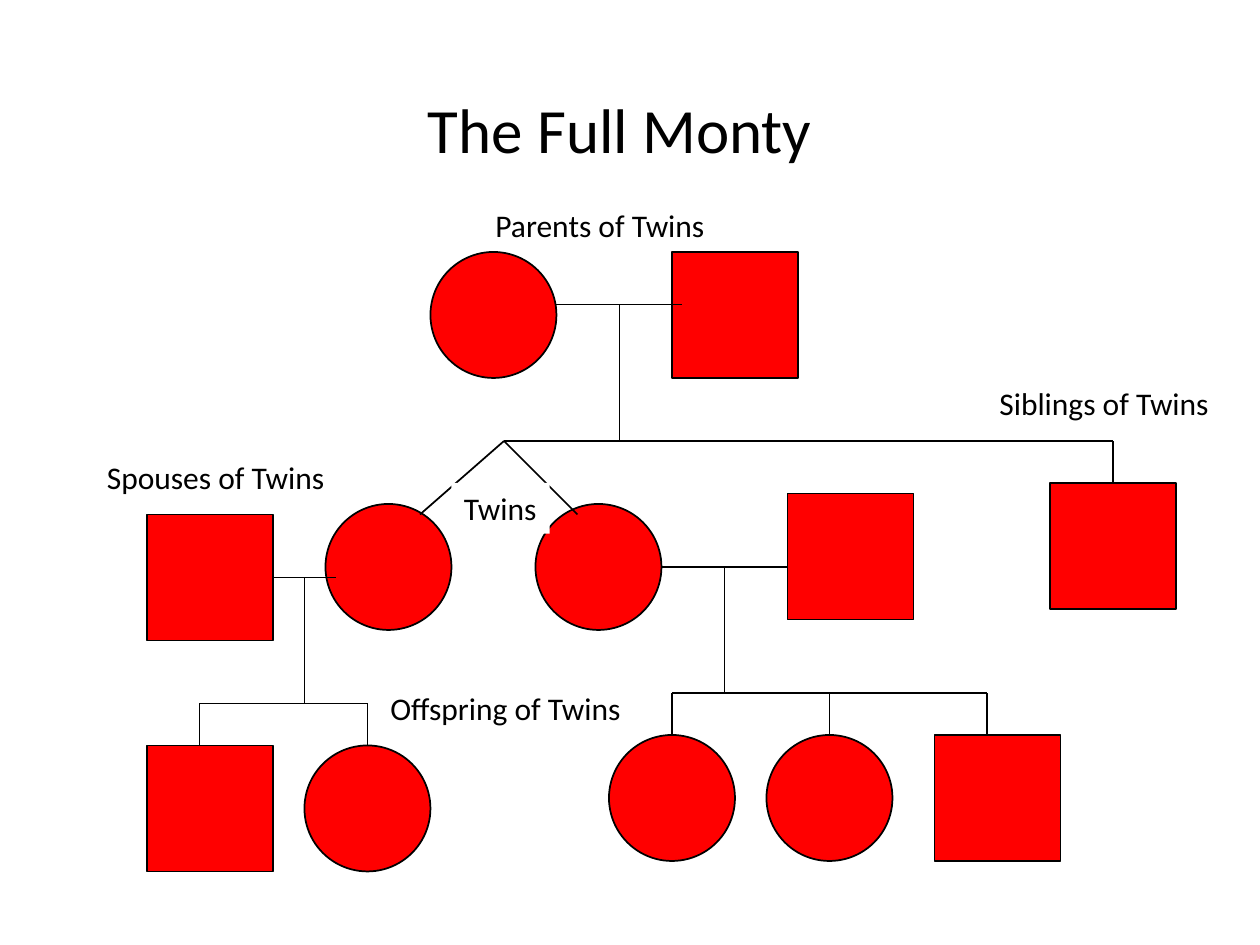
"""Build a pedigree chart of twins with their parents, siblings, spouses and offspring."""
from dataclasses import dataclass

from lxml import etree
from pptx import Presentation
from pptx import util as u
from pptx.dml.color import RGBColor
from pptx.enum import shapes, text
from pptx.oxml.ns import qn

RED = RGBColor(0xFF, 0x00, 0x00)
BLACK = RGBColor(0x00, 0x00, 0x00)
WHITE = RGBColor(0xFF, 0xFF, 0xFF)
FONT = "Calibri"
GRID_PER_INCH = 12
SIZE = 12
DROP = 4
WOMAN = shapes.MSO_SHAPE.OVAL
MAN = shapes.MSO_SHAPE.RECTANGLE


@dataclass(frozen=True)
class Person:
    kind: shapes.MSO_SHAPE
    x: int
    y: int


@dataclass(frozen=True)
class Family:
    left: int
    right: int
    y: int
    bar_y: int
    bar: tuple[int, int]
    drops: tuple[int, ...]


@dataclass(frozen=True)
class Label:
    text: str
    x: int
    y: int
    width: float


PEOPLE = [
    Person(WOMAN, 41, 24), Person(MAN, 64, 24),
    Person(MAN, 14, 49), Person(WOMAN, 31, 48),
    Person(WOMAN, 51, 48), Person(MAN, 75, 47),
    Person(MAN, 100, 46),
    Person(MAN, 14, 71), Person(WOMAN, 29, 71),
    Person(WOMAN, 58, 70), Person(WOMAN, 73, 70), Person(MAN, 89, 70),
]
FAMILIES = [
    Family(53, 65, 29, 42, (48, 106), (106,)),
    Family(26, 32, 55, 67, (19, 35), (19, 35)),
    Family(63, 75, 54, 66, (64, 94), (64, 79, 94)),
]
TWIN_FORK = (48, 42)
TWIN_TOPS = [(40, 49), (55, 49)]
LABELS = [
    Label("Twins", 43, 46, 1.98),
    Label("Parents of Twins", 46, 19, 4.78),
    Label("Offspring of Twins", 36, 65, 5.21),
    Label("Siblings of Twins", 94, 36, 4.78),
    Label("Spouses of Twins", 9, 43, 4.95),
]


def grid(n: float) -> int:
    """Convert grid steps to a length."""
    return u.Cm(2.54 * n / GRID_PER_INCH)


def write(tf, content: str, *, size: int, align=text.PP_ALIGN.LEFT,
          anchor=text.MSO_ANCHOR.TOP) -> None:
    """Put formatted text in a text frame."""
    tf.word_wrap = False
    tf.auto_size = text.MSO_AUTO_SIZE.NONE
    tf.vertical_anchor = anchor
    p = tf.paragraphs[0]
    p.alignment = align
    r = p.add_run()
    r.text = content
    r.font.name = FONT
    r.font.size = u.Pt(size)
    r.font.color.rgb = BLACK


def add_person(s, person: Person) -> None:
    """Draw one family member."""
    sp = s.shapes.add_shape(person.kind, grid(person.x), grid(person.y),
                            grid(SIZE), grid(SIZE))
    sp.shadow.inherit = False
    sp.fill.solid()
    sp.fill.fore_color.rgb = RED
    sp.line.color.rgb = BLACK
    sp.line.width = u.Pt(1)


def add_line(s, start: tuple[int, int], end: tuple[int, int]) -> None:
    """Draw a thin line between two grid points."""
    c = s.shapes.add_connector(shapes.MSO_CONNECTOR.STRAIGHT,
                               *map(grid, start + end))
    c.line.color.rgb = BLACK
    c.line.width = u.Pt(1)
    etree.SubElement(c._element.spPr, qn("a:effectLst"))


def add_family(s, family: Family) -> None:
    """Draw the marriage line, stem, sibling bar and drops of a family."""
    middle = (family.left + family.right) // 2
    add_line(s, (family.left, family.y), (family.right, family.y))
    add_line(s, (middle, family.y), (middle, family.bar_y))
    add_line(s, *((x, family.bar_y) for x in family.bar))
    for x in family.drops:
        add_line(s, (x, family.bar_y), (x, family.bar_y + DROP))


def add_label(s, label: Label) -> None:
    """Draw a white caption."""
    sp = s.shapes.add_textbox(grid(label.x), grid(label.y),
                              u.Cm(label.width), u.Cm(1.02))
    sp.fill.solid()
    sp.fill.fore_color.rgb = WHITE
    write(sp.text_frame, label.text, size=18)


def main() -> None:
    """Create and save the slide."""
    prs = Presentation()
    prs.slide_width, prs.slide_height = u.Cm(25.4), u.Cm(19.05)
    s = prs.slides.add_slide(prs.slide_layouts[5])
    title = s.shapes.title
    title.left, title.top = u.Cm(8.33), u.Cm(1.68)
    title.width, title.height = u.Cm(8.33), u.Cm(1.8)
    write(title.text_frame, "The Full Monty", size=36,
          align=text.PP_ALIGN.CENTER, anchor=text.MSO_ANCHOR.MIDDLE)
    for person in PEOPLE:
        add_person(s, person)
    for family in FAMILIES:
        add_family(s, family)
    for top in TWIN_TOPS:
        add_line(s, TWIN_FORK, top)
    for label in LABELS:
        add_label(s, label)
    prs.save("out.pptx")


if __name__ == "__main__":
    main()
